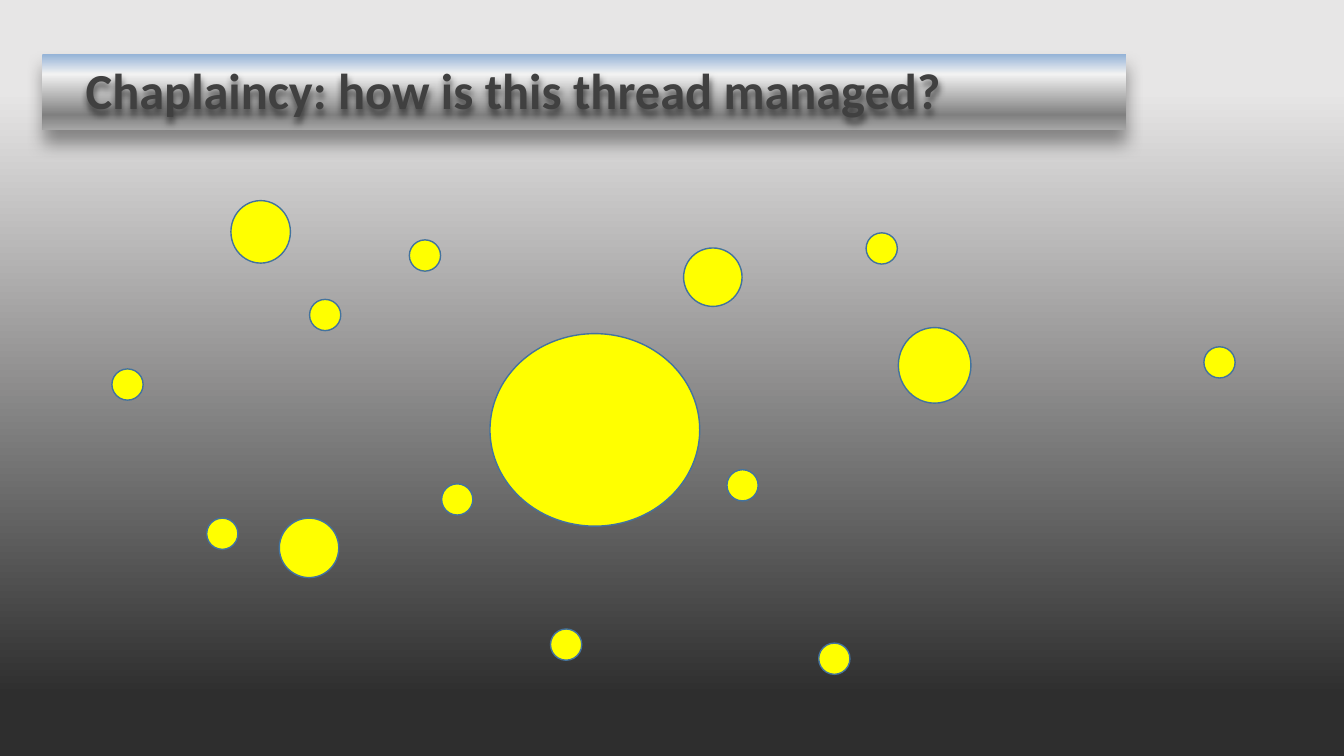
from lxml import etree
from pptx import Presentation
from pptx.dml.color import RGBColor
from pptx.enum.shapes import MSO_SHAPE
from pptx.enum.text import MSO_ANCHOR, MSO_AUTO_SIZE, PP_ALIGN
from pptx.oxml.ns import qn
from pptx.util import Inches, Pt

RECTANGLE, OVAL = MSO_SHAPE.RECTANGLE, MSO_SHAPE.OVAL
TOP, LEFT, NO_FIT = MSO_ANCHOR.TOP, PP_ALIGN.LEFT, MSO_AUTO_SIZE.NONE
TITLE_ONLY = 5

BACKDROP = [(12, "E7E6E6"), (92, "2E2E2E")]
BANNER = [(0, "95B3D7"), (26, "F2F2F2"), (80, "808080"), (100, "A6A6A6")]
SMALL = 0.31
SMALL_DOTS = [
    (1.11, 3.66), (4.06, 2.38), (3.07, 2.97), (8.12, 6.38), (2.05, 5.14), (7.21, 4.66),
    (4.38, 4.8), (11.94, 3.44), (5.46, 6.24), (8.59, 2.31),
]
LARGE_DOTS = [
    (2.29, 1.99, 0.59, 0.62), (8.91, 3.25, 0.72, 0.75), (2.77, 5.14, 0.59, 0.59),
    (6.78, 2.46, 0.58, 0.58), (4.86, 3.31, 2.08, 1.91),
]


def colour(code):
    return RGBColor.from_string(code)


def write(frame, text, size, code, font="Calibri", bold=False, align=LEFT):
    paragraph = frame.paragraphs[0]
    paragraph.alignment = align
    run = paragraph.add_run()
    run.text = text
    run.font.name = font
    run.font.size = Pt(size)
    run.font.bold = bold
    run.font.color.rgb = colour(code)


class ThreadSlide:
    dot_fill = "FFFF00"
    dot_line = "43739E"
    title_colour = "404040"

    def __init__(self, deck):
        self.slide = deck.slides.add_slide(deck.slide_layouts[TITLE_ONLY])

    def gradient(self, fill, owner, stops):
        fill.gradient()
        fill.gradient_angle = 270
        stop_list = owner.find(".//" + qn("a:gsLst"))
        for default_stop in list(stop_list):
            stop_list.remove(default_stop)
        for position, code in stops:
            stop = etree.SubElement(stop_list, qn("a:gs"), pos=str(position * 1000))
            etree.SubElement(stop, qn("a:srgbClr"), val=code)

    def drop_shadow(self, shape, blur, distance, opacity):
        shape.shadow.inherit = False
        effects = shape.element.spPr.find(qn("a:effectLst"))
        shadow = etree.SubElement(
            effects, qn("a:outerShdw"), blurRad=str(Pt(blur)), dist=str(Pt(distance)),
            dir="5400000", algn="t", rotWithShape="0",
        )
        black = etree.SubElement(shadow, qn("a:srgbClr"), val="000000")
        etree.SubElement(black, qn("a:alpha"), val=str(opacity * 1000))

    def background(self, stops):
        self.gradient(self.slide.background.fill, self.slide.element, stops)

    def banner(self, left, top, width, height, stops):
        banner = self.slide.shapes.add_shape(
            RECTANGLE, Inches(left), Inches(top), Inches(width), Inches(height))
        self.gradient(banner.fill, banner.element.spPr, stops)
        banner.line.fill.background()
        self.drop_shadow(banner, 12, 9, 40)

    def title(self, text, left, top, width, height):
        title = self.slide.shapes.title
        title.left, title.top = Inches(left), Inches(top)
        title.width, title.height = Inches(width), Inches(height)
        self.slide.shapes.element.append(title.element)
        self.drop_shadow(title, 5, 3, 60)
        frame = title.text_frame
        frame.word_wrap = False
        frame.auto_size = NO_FIT
        frame.vertical_anchor = TOP
        write(frame, text, 36, self.title_colour, bold=True)

    def dot(self, left, top, width, height):
        dot = self.slide.shapes.add_shape(
            OVAL, Inches(left), Inches(top), Inches(width), Inches(height))
        dot.shadow.inherit = False
        dot.fill.solid()
        dot.fill.fore_color.rgb = colour(self.dot_fill)
        dot.line.color.rgb = colour(self.dot_line)
        dot.line.width = Pt(1)


def main():
    deck = Presentation()
    deck.slide_width, deck.slide_height = Inches(13.33), Inches(7.5)
    thread = ThreadSlide(deck)
    thread.background(BACKDROP)
    thread.banner(0.42, 0.54, 10.75, 0.75, BANNER)
    thread.title("Chaplaincy: how is this thread managed?", 0.75, 0.54, 8.7, 0.7)
    for left, top in SMALL_DOTS:
        thread.dot(left, top, SMALL, SMALL)
    for bounds in LARGE_DOTS:
        thread.dot(*bounds)
    deck.save("out.pptx")


if __name__ == "__main__":
    main()
